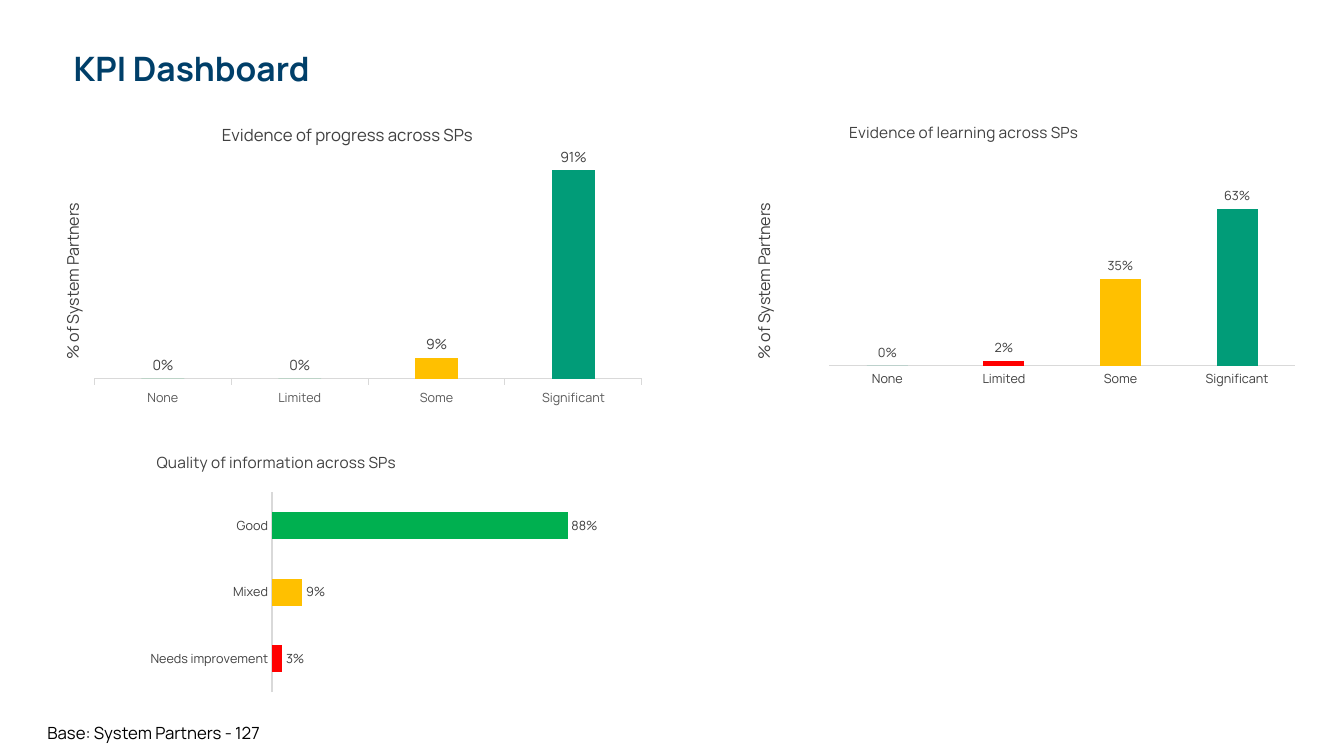
import pptx
import pptx.chart.data
import pptx.dml.color
import pptx.enum.chart
import pptx.enum.text
import pptx.oxml
import pptx.oxml.ns
import pptx.util

Inches = pptx.util.Inches
FONT = "Manrope"
GREY = "404040"
AXIS_GREY = "D9D9D9"
NAVY = "003F69"
TEAL = "019C78"
GREEN = "00B050"
AMBER = "FFC000"
RED = "FF0000"
COLUMNS = pptx.enum.chart.XL_CHART_TYPE.COLUMN_CLUSTERED
BARS = pptx.enum.chart.XL_CHART_TYPE.BAR_CLUSTERED
RATINGS = ["None", "Limited", "Some", "Significant"]


def rgb(color):
    return pptx.dml.color.RGBColor.from_string(color)


def style(font, size, color, bold=False):
    font.name = FONT
    font.size = pptx.util.Pt(size)
    font.bold = bold
    font.color.rgb = rgb(color)


def write(frame, text, size=12, color="000000", bold=False, spacing=None):
    paragraph = frame.paragraphs[0]
    run = paragraph.add_run()
    run.text = text
    style(run.font, size, color, bold)
    if spacing:
        paragraph.line_spacing = spacing


def place(element, index, **fractions):
    for old in element.findall(pptx.oxml.ns.qn("c:layout")):
        element.remove(old)
    target = '<c:layoutTarget val="inner"/>' if "w" in fractions else ""
    modes = "".join(f'<c:{key}Mode val="edge"/>' for key in ("x", "y"))
    values = "".join(f'<c:{key} val="{value}"/>' for key, value in fractions.items())
    element.insert(index, pptx.oxml.parse_xml(
        f'<c:layout {pptx.oxml.ns.nsdecls("c")}><c:manualLayout>'
        f"{target}{modes}{values}</c:manualLayout></c:layout>"))


def add_heading(slide, text):
    heading = slide.shapes.title
    heading.left, heading.top = Inches(0.63), Inches(0.47)
    heading.width, heading.height = Inches(12.07), Inches(0.56)
    frame = heading.text_frame
    frame.vertical_anchor = pptx.enum.text.MSO_ANCHOR.TOP
    write(frame, text, size=24, color=NAVY, bold=True, spacing=0.9)
    frame.paragraphs[0].alignment = pptx.enum.text.PP_ALIGN.LEFT


def add_base_note(slide, text):
    note = slide.shapes.add_textbox(Inches(0.47), Inches(7.15), Inches(2.83), Inches(0.21))
    frame = note.text_frame
    frame.word_wrap = True
    frame.margin_left = frame.margin_right = frame.margin_top = frame.margin_bottom = 0
    write(frame, text, spacing=1.1)


def format_axes(chart, label_color, ticks):
    marks = pptx.enum.chart.XL_TICK_MARK
    categories = chart.category_axis
    categories.has_major_gridlines = False
    categories.major_tick_mark = marks.OUTSIDE if ticks else marks.NONE
    categories.format.line.color.rgb = rgb(AXIS_GREY)
    categories.format.line.width = pptx.util.Pt(0.75)
    style(categories.tick_labels.font, 9, label_color)
    shares = chart.value_axis
    shares.minimum_scale, shares.maximum_scale = 0, 1
    shares.has_major_gridlines = False
    shares.major_tick_mark = marks.NONE
    shares.tick_label_position = pptx.enum.chart.XL_TICK_LABEL_POSITION.NONE
    shares.format.line.fill.background()


def add_axis_title(axis, text, size, position):
    title = axis.axis_title
    write(title.text_frame, text, size=size, color=GREY)
    body = title._element.find(".//" + pptx.oxml.ns.qn("a:bodyPr"))
    body.set("rot", "-5400000")
    body.set("vert", "horz")
    place(title._element, 1, x=position[0], y=position[1])


def add_kpi_chart(slide, kind, box, title, title_at, categories, values, colors, plot_at,
                  gap, title_size=11, label_size=9, overlap=0, axis_color=GREY,
                  ticks=False, axis_title_at=None):
    data = pptx.chart.data.CategoryChartData(number_format="0%")
    data.categories = categories
    data.add_series("Series 1", values)
    chart = slide.shapes.add_chart(kind, *map(Inches, box), data).chart
    style(chart.font, label_size, GREY)
    chart.has_legend = False
    chart.has_title = True
    write(chart.chart_title.text_frame, title, size=title_size, color=GREY)
    place(chart.chart_title._element, 1, x=title_at[0], y=title_at[1])
    format_axes(chart, axis_color, ticks)
    if axis_title_at:
        add_axis_title(chart.value_axis, "% of System Partners", 11.5, axis_title_at)
    place(chart._chartSpace.chart.plotArea, 0, **dict(zip("xywh", plot_at)))

    plot = chart.plots[0]
    plot.vary_by_categories = False
    plot.gap_width = gap
    plot.overlap = overlap
    plot.has_data_labels = True
    labels = plot.data_labels
    labels.show_value = True
    labels.number_format = "0%"
    labels.number_format_is_linked = False
    labels.position = pptx.enum.chart.XL_LABEL_POSITION.OUTSIDE_END
    style(labels.font, label_size, GREY)
    series = plot.series[0]
    series.invert_if_negative = False
    for index, color in enumerate(colors):
        fill = series.points[index].format.fill
        fill.solid()
        fill.fore_color.rgb = rgb(color)


def main():
    deck = pptx.Presentation()
    deck.slide_width, deck.slide_height = Inches(13.33), Inches(7.5)
    slide = deck.slides.add_slide(deck.slide_layouts[5])
    add_heading(slide, "KPI Dashboard")
    add_base_note(slide, "Base: System Partners - 127")
    add_kpi_chart(slide, COLUMNS, (0.32, 0.99, 6.17, 3.11),
                  "Evidence of progress across SPs", (0.3, 0.06),
                  RATINGS, [0, 0, 0.09, 0.91], [GREEN, GREEN, AMBER, TEAL],
                  (0.1, 0.16, 0.88, 0.73), gap=219, title_size=12, label_size=10,
                  overlap=-27, axis_color="595959", ticks=True, axis_title_at=(0.04, 0.32))
    add_kpi_chart(slide, COLUMNS, (7.31, 1.03, 5.71, 3.29),
                  "Evidence of learning across SPs", (0.19, 0.04),
                  RATINGS, [0, 0.02, 0.35, 0.63], [TEAL, RED, AMBER, TEAL],
                  (0.16, 0.04, 0.81, 0.75), gap=184, axis_title_at=(0.02, 0.29))
    add_kpi_chart(slide, BARS, (0.23, 4.32, 6.17, 2.83),
                  "Quality of information across SPs", (0.21, 0.04),
                  ["Needs improvement", "Mixed", "Good"], [0.03, 0.09, 0.88],
                  [RED, AMBER, GREEN], (0.4, 0.2, 0.54, 0.7), gap=145)
    deck.save("out.pptx")


if __name__ == "__main__":
    main()
